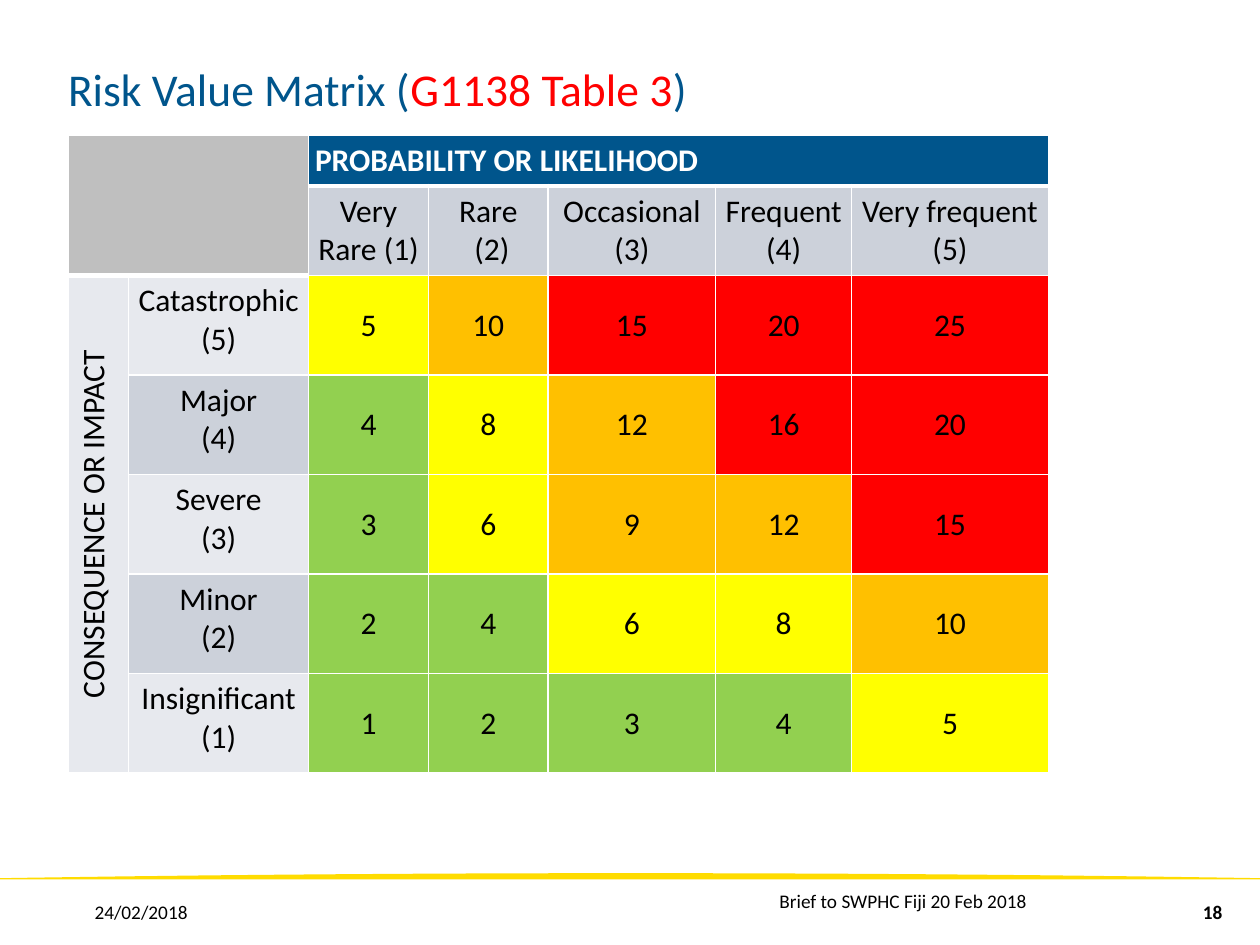
import pptx
import pptx.dml.color
import pptx.enum.text
import pptx.oxml.ns
import pptx.util
from lxml import etree

Inches = pptx.util.Inches
Pt = pptx.util.Pt
RGB = pptx.dml.color.RGBColor
ALIGN = pptx.enum.text.PP_ALIGN
ANCHOR = pptx.enum.text.MSO_ANCHOR
qn = pptx.oxml.ns.qn

BLACK = RGB(0x00, 0x00, 0x00)
WHITE = RGB(0xFF, 0xFF, 0xFF)
BLUE = RGB(0x00, 0x55, 0x8C)
RED = RGB(0xFF, 0x00, 0x00)
ORANGE = RGB(0xFF, 0xC0, 0x00)
YELLOW = RGB(0xFF, 0xFF, 0x00)
GREEN = RGB(0x92, 0xD0, 0x50)
GREY = RGB(0xBF, 0xBF, 0xBF)
BAND_DARK = RGB(0xCC, 0xD1, 0xDA)
BAND_LIGHT = RGB(0xE7, 0xE9, 0xEE)
GOLD = RGB(0xFF, 0xDC, 0x00)

COLS = [0.48, 1.43, 0.95, 0.95, 1.33, 1.08, 1.56]
ROWS = [0.4, 0.7] + [0.79] * 5
PROBABILITIES = ["Very Rare (1)", "Rare\n (2)", "Occasional (3)",
                 "Frequent\n(4)", "Very frequent\n(5)"]
CONSEQUENCES = ["Catastrophic\n(5)", "Major\n(4)", "Severe\n(3)",
                "Minor\n(2)", "Insignificant\n(1)"]


def set_format(target, values):
    for name, value in values.items():
        setattr(target, name, value)


def add_run(p, text, size, color, bold=False):
    r = p.add_run()
    r.text = text
    set_format(r.font, {"name": "Calibri", "size": Pt(size), "bold": bold})
    r.font.color.rgb = color


def set_frame(tf, anchor):
    set_format(tf, {"word_wrap": True, "vertical_anchor": anchor,
                    "auto_size": pptx.enum.text.MSO_AUTO_SIZE.NONE,
                    "margin_left": 0, "margin_right": 0,
                    "margin_top": 0, "margin_bottom": 0})


def set_title(s):
    sp = s.shapes.title
    set_format(sp, {"left": Inches(0.54), "top": Inches(0.28),
                    "width": Inches(9), "height": Inches(0.64)})
    set_frame(sp.text_frame, ANCHOR.BOTTOM)
    p = sp.text_frame.paragraphs[0]
    p.alignment = ALIGN.LEFT
    for text, color in [("Risk Value Matrix (", BLUE), ("G1138 Table 3", RED), (")", BLUE)]:
        add_run(p, text, 26, color)


def add_text(s, box, text, align, bold=False):
    tf = s.shapes.add_textbox(*map(Inches, box)).text_frame
    set_frame(tf, ANCHOR.MIDDLE)
    p = tf.paragraphs[0]
    p.alignment = align
    add_run(p, text, 11, BLACK, bold)


def add_footer_curve(s):
    # Shallow cubic arc, sampled from right to left, above a flat base
    steps = 40
    arc = []
    for i in range(steps + 1):
        t = i / steps
        arc.append((10.01 * (1 - t), 6.97 - 0.04 * 3 * t * (1 - t) * 1.33))
    fb = s.shapes.build_freeform(0, Inches(6.98), scale=1)
    points = [(10.01, 6.98)] + arc
    fb.add_line_segments([(Inches(x), Inches(y)) for x, y in points], close=True)
    sp = fb.convert_to_shape()
    sp.shadow.inherit = False
    sp.fill.solid()
    sp.fill.fore_color.rgb = GOLD
    sp.line.fill.background()


def set_borders(cell, widths):
    tc_pr = cell._tc.get_or_add_tcPr()
    for i, (side, width) in enumerate(widths.items()):
        ln = etree.Element(qn("a:ln" + side), w=str(Pt(width)))
        fill = etree.SubElement(ln, qn("a:solidFill"))
        etree.SubElement(fill, qn("a:srgbClr"), val=str(WHITE))
        tc_pr.insert(i, ln)


def set_cell(cell, text, fill, color=BLACK, align=ALIGN.CENTER,
             anchor=ANCHOR.TOP, bold=False):
    cell.fill.solid()
    cell.fill.fore_color.rgb = fill
    cell.vertical_anchor = anchor
    tf = cell.text_frame
    for i, line in enumerate(text.split("\n") if text else []):
        p = tf.add_paragraph() if i else tf.paragraphs[0]
        p.alignment = align
        add_run(p, line, 18, color, bold)


def risk_color(value):
    for limit, color in [(4, GREEN), (8, YELLOW), (12, ORANGE)]:
        if value <= limit:
            return color
    return RED


def add_matrix(s):
    frame = s.shapes.add_table(len(ROWS), len(COLS), Inches(0.54), Inches(1.07),
                               Inches(sum(COLS)), Inches(sum(ROWS)))
    table = frame.table
    set_format(table, {"first_row": False, "horz_banding": False})
    for col, width in zip(table.columns, COLS):
        col.width = Inches(width)
    for row, height in zip(table.rows, ROWS):
        row.height = Inches(height)

    # Margins and white borders, heavier under the header cells
    def rule_width(r, c):
        return 3 if r == 0 or (r == 1 and c < 2) else 1

    for r in range(len(ROWS)):
        for c in range(len(COLS)):
            cell = table.cell(r, c)
            set_format(cell, {"margin_" + side: Inches(0.05)
                              for side in ("left", "right", "top", "bottom")})
            set_borders(cell, {"L": 1, "R": 1, "T": rule_width(r - 1, c),
                               "B": rule_width(r, c)})

    # Merged headings
    table.cell(0, 0).merge(table.cell(1, 1))
    table.cell(0, 2).merge(table.cell(0, 6))
    table.cell(2, 0).merge(table.cell(6, 0))
    set_cell(table.cell(0, 0), "", GREY)
    set_cell(table.cell(0, 2), "PROBABILITY OR LIKELIHOOD", BLUE, WHITE,
             ALIGN.LEFT, bold=True)
    set_cell(table.cell(2, 0), "CONSEQUENCE OR IMPACT", BAND_LIGHT)
    table.cell(2, 0)._tc.get_or_add_tcPr().set("vert", "vert270")

    # Scale labels and risk values
    for j, label in enumerate(PROBABILITIES):
        set_cell(table.cell(1, j + 2), label, BAND_DARK)
    for i, label in enumerate(CONSEQUENCES):
        set_cell(table.cell(i + 2, 1), label, BAND_DARK if i % 2 else BAND_LIGHT)
        for j in range(len(PROBABILITIES)):
            value = (len(CONSEQUENCES) - i) * (j + 1)
            set_cell(table.cell(i + 2, j + 2), str(value), risk_color(value),
                     anchor=ANCHOR.MIDDLE)


def main():
    prs = pptx.Presentation()
    set_format(prs, {"slide_width": Inches(10), "slide_height": Inches(7.5)})
    s = prs.slides.add_slide(prs.slide_layouts[5])
    add_footer_curve(s)
    add_matrix(s)
    set_title(s)
    # Footer: date, event, slide number
    add_text(s, (0.75, 6.98, 2.32, 0.52), "24/02/2018", ALIGN.LEFT)
    add_text(s, (1.69, 6.95, 6.46, 0.4), "Brief to SWPHC Fiji 20 Feb 2018", ALIGN.RIGHT)
    add_text(s, (9.25, 6.98, 0.75, 0.52), "18", ALIGN.CENTER, bold=True)
    prs.save("out.pptx")


if __name__ == "__main__":
    main()
